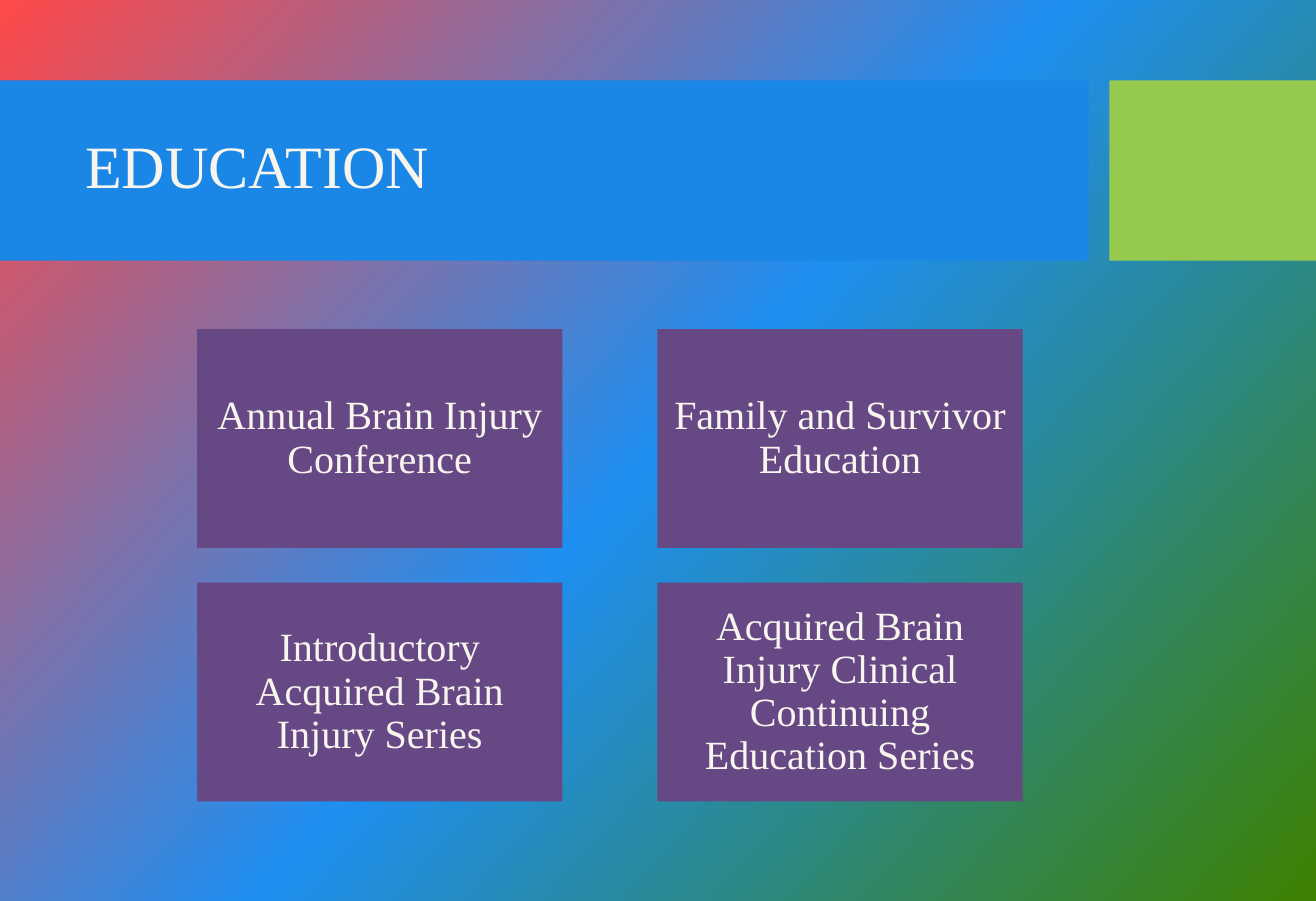
"""Build the Education slide: a title band above four programme cards."""
from copy import deepcopy
from dataclasses import dataclass

from pptx import Presentation
from pptx.dml.color import RGBColor
from pptx.enum.shapes import MSO_SHAPE
from pptx.enum.text import MSO_ANCHOR, MSO_AUTO_SIZE, PP_ALIGN
from pptx.oxml.ns import qn
from pptx.util import Inches, Pt

RECTANGLE = MSO_SHAPE.RECTANGLE
MIDDLE = MSO_ANCHOR.MIDDLE
NO_FIT = MSO_AUTO_SIZE.NONE
LEFT, CENTER = PP_ALIGN.LEFT, PP_ALIGN.CENTER

TITLE = "EDUCATION"
PROGRAMMES = [
    ["Annual Brain Injury Conference", "Family and Survivor Education"],
    ["Introductory Acquired Brain Injury Series",
     "Acquired Brain Injury Clinical Continuing Education Series"],
]


@dataclass(frozen=True)
class Theme:
    """Colours, font and type sizes of the slide."""
    backdrop: tuple = ("FF4949", "1F8FF1", "3D8100")
    backdrop_angle: int = 318
    band: str = "1A86E5"
    accent: str = "96CA4F"
    card: str = "664885"
    text: str = "F8F5EF"
    font: str = "Times New Roman"
    title_size: int = 36
    card_size: int = 24


THEME = Theme()
SLIDE_W, SLIDE_H = 10.95, 7.5
BAND_TOP, BAND_H, BAND_W, ACCENT_LEFT = 0.67, 1.5, 9.06, 9.23
TITLE_BOX = (0.61, 0.82, 8.63, 1.18)
CARD_W, CARD_H = 3.04, 1.82
CARD_LEFT, CARD_TOP = 1.64, 2.74
COLUMN_STEP, ROW_STEP = 3.83, 2.11
CARD_INSET = 0.1


def paint_backdrop(slide):
    """Fill the background with an evenly stopped diagonal gradient."""
    fill = slide.background.fill
    fill.gradient()
    fill.gradient_angle = THEME.backdrop_angle
    stop_list = slide.element.find(".//" + qn("a:gsLst"))
    stop_list.insert(1, deepcopy(stop_list[0]))
    last = len(THEME.backdrop) - 1
    for index, (stop, color) in enumerate(zip(fill.gradient_stops, THEME.backdrop)):
        stop.position = index / last
        stop.color.rgb = RGBColor.from_string(color)


def add_block(slide, box, color):
    """Add a plain filled rectangle."""
    block = slide.shapes.add_shape(RECTANGLE, *map(Inches, box))
    block.shadow.inherit = False
    block.fill.solid()
    block.fill.fore_color.rgb = RGBColor.from_string(color)
    block.line.fill.background()
    return block


def write(frame, text, size, alignment):
    """Set one wrapped, vertically centred paragraph."""
    frame.text = text
    frame.word_wrap = True
    frame.auto_size = NO_FIT
    frame.vertical_anchor = MIDDLE
    paragraph = frame.paragraphs[0]
    paragraph.alignment = alignment
    paragraph.line_spacing = 0.9
    paragraph.font.name = THEME.font
    paragraph.font.size = Pt(size)
    paragraph.font.color.rgb = RGBColor.from_string(THEME.text)


def add_title(slide):
    """Draw the two bands and lay the title over them."""
    add_block(slide, (0, BAND_TOP, BAND_W, BAND_H), THEME.band)
    add_block(slide, (ACCENT_LEFT, BAND_TOP, SLIDE_W - ACCENT_LEFT, BAND_H), THEME.accent)
    title = slide.shapes.title
    title.left, title.top, title.width, title.height = map(Inches, TITLE_BOX)
    write(title.text_frame, TITLE, THEME.title_size, LEFT)
    slide.shapes.element.append(title.element)


def add_cards(slide):
    """Lay the programmes out on a two by two grid."""
    for row, programmes in enumerate(PROGRAMMES):
        for column, programme in enumerate(programmes):
            left = CARD_LEFT + column * COLUMN_STEP
            top = CARD_TOP + row * ROW_STEP
            card = add_block(slide, (left, top, CARD_W, CARD_H), THEME.card)
            frame = card.text_frame
            frame.margin_left = frame.margin_right = Inches(CARD_INSET)
            frame.margin_top = frame.margin_bottom = Inches(CARD_INSET)
            write(frame, programme, THEME.card_size, CENTER)


def main():
    """Assemble and save the slide."""
    deck = Presentation()
    deck.slide_width, deck.slide_height = Inches(SLIDE_W), Inches(SLIDE_H)
    slide = deck.slides.add_slide(deck.slide_layouts[5])
    paint_backdrop(slide)
    add_title(slide)
    add_cards(slide)
    deck.save("out.pptx")


if __name__ == "__main__":
    main()
